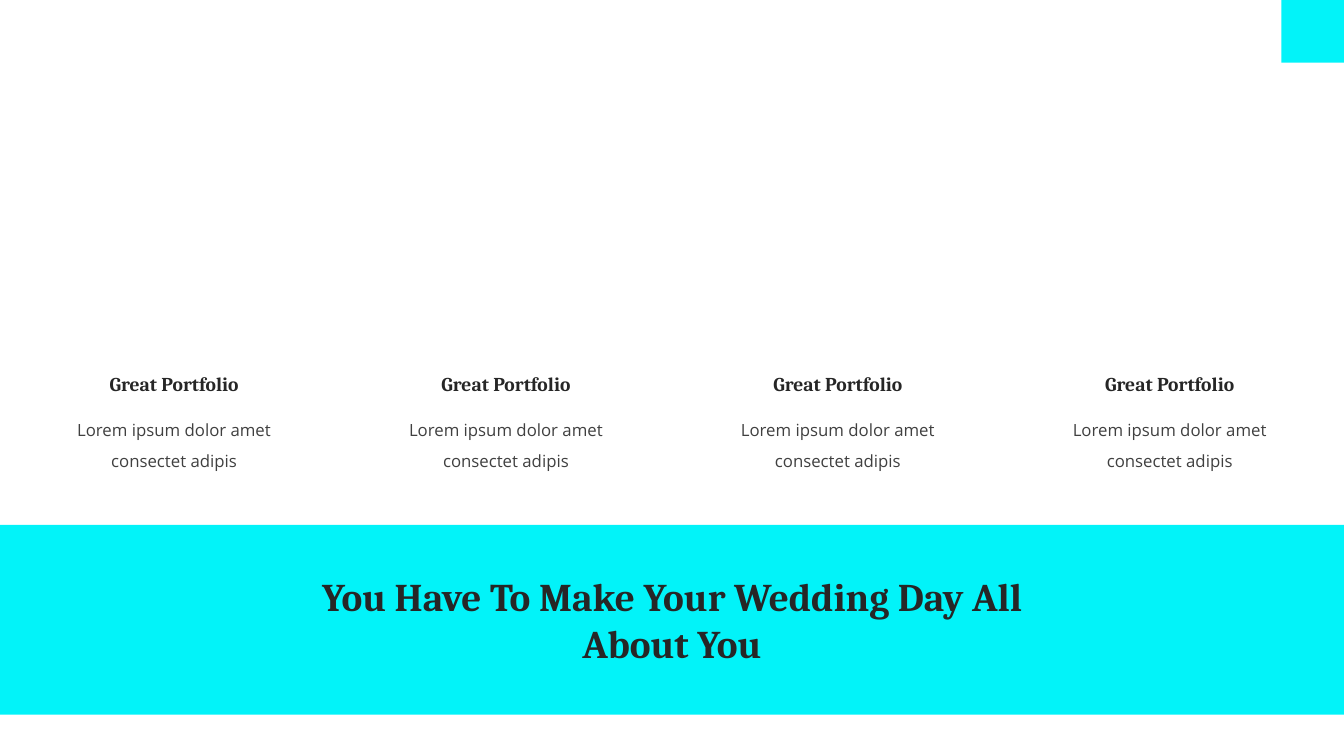
"""Build a portfolio slide with four captions above a headline banner."""
from pptx import Presentation
from pptx.dml.color import RGBColor
from pptx.enum.shapes import MSO_SHAPE
from pptx.enum.text import MSO_AUTO_SIZE, PP_ALIGN
from pptx.util import Cm, Pt

RECTANGLE = MSO_SHAPE.RECTANGLE
CENTER = PP_ALIGN.CENTER
GROW = MSO_AUTO_SIZE.SHAPE_TO_FIT_TEXT

HEADLINE = "You Have To Make Your Wedding Day All About You"
PORTFOLIO = [("Great Portfolio", "Lorem ipsum dolor amet consectet adipis")] * 4

CYAN, INK, GREY = "02F3F9", "262626", "404040"
SERIF, SANS = "Cambria", "Open Sans"
SLIDE_W, SLIDE_H = 33.87, 19.05
CORNER = 1.58
FIRST_CENTER = 4.39
PITCH = (SLIDE_W - 2 * FIRST_CENTER) / (len(PORTFOLIO) - 1)


def color(hex_code):
    return RGBColor.from_string(hex_code)


def add_block(slide, left, top, width, height):
    block = slide.shapes.add_shape(RECTANGLE, Cm(left), Cm(top), Cm(width), Cm(height))
    block.shadow.inherit = False
    block.fill.solid()
    block.fill.fore_color.rgb = color(CYAN)
    block.line.fill.background()


def add_text(slide, text, *, center, top, width, height, size,
             font=SERIF, ink=INK, bold=True, spacing=None):
    box = slide.shapes.add_textbox(Cm(center - width / 2), Cm(top), Cm(width), Cm(height))
    frame = box.text_frame
    frame.word_wrap = True
    frame.auto_size = GROW
    paragraph = frame.paragraphs[0]
    paragraph.alignment = CENTER
    paragraph.line_spacing = spacing
    run = paragraph.add_run()
    run.text = text
    run.font.name = font
    run.font.size = Pt(size)
    run.font.bold = bold
    run.font.color.rgb = color(ink)


def main():
    deck = Presentation()
    deck.slide_width, deck.slide_height = Cm(SLIDE_W), Cm(SLIDE_H)
    slide = deck.slides.add_slide(deck.slide_layouts[6])

    add_block(slide, SLIDE_W - CORNER, 0, CORNER, CORNER)
    add_block(slide, 0, 13.23, SLIDE_W, 4.78)

    for index, (heading, description) in enumerate(PORTFOLIO):
        center = FIRST_CENTER + index * PITCH
        add_text(slide, description, center=center, top=10.21, width=5.79, height=1.7,
                 size=12, font=SANS, ink=GREY, bold=False, spacing=1.5)
        add_text(slide, heading, center=center, top=9.25, width=4.62, height=0.86, size=14)

    add_text(slide, HEADLINE, center=SLIDE_W / 2, top=14.3, width=19, height=2.64, size=28)
    deck.save("out.pptx")


if __name__ == "__main__":
    main()
